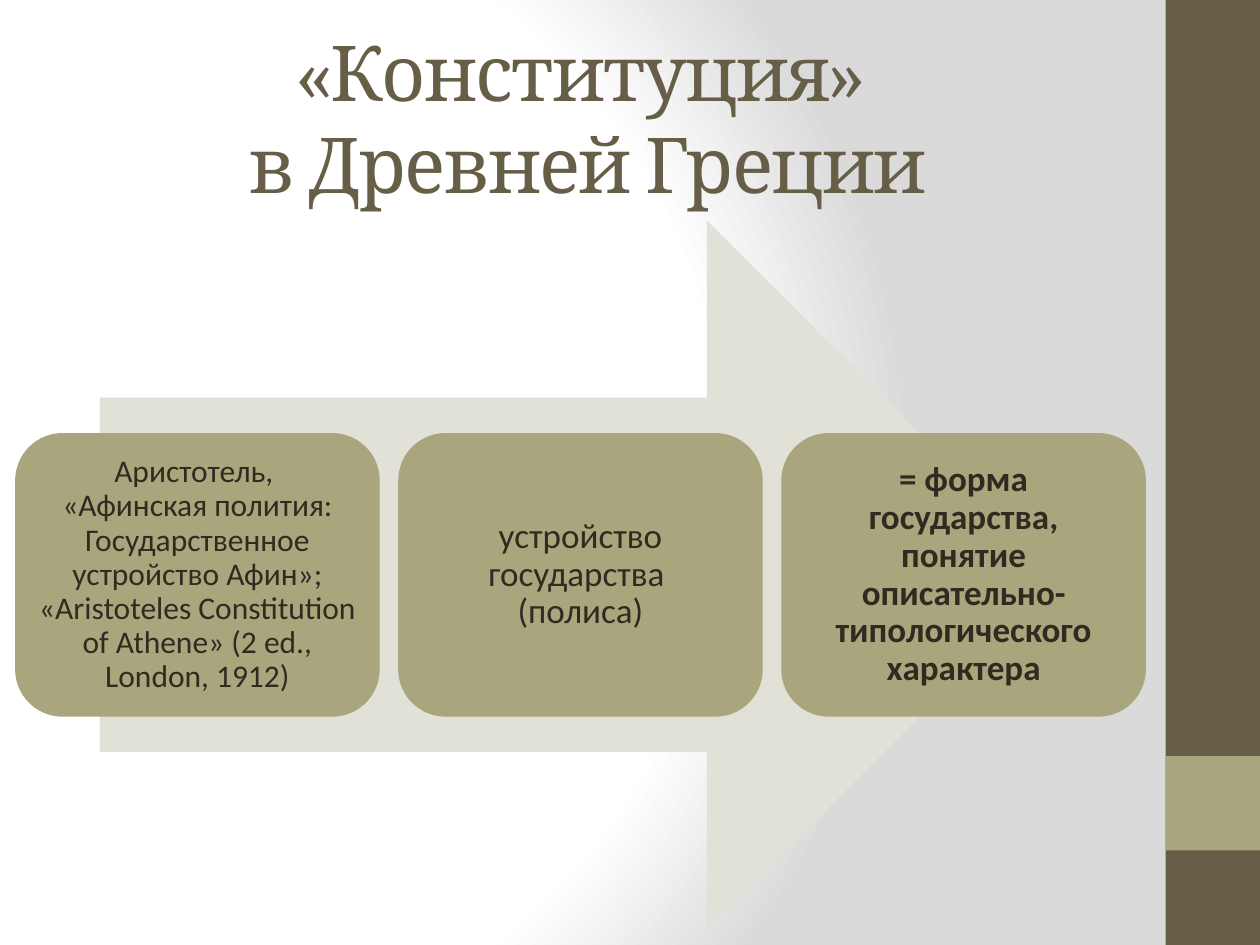
from dataclasses import dataclass

from pptx import Presentation
from pptx.dml.color import RGBColor
from pptx.enum.shapes import MSO_SHAPE
from pptx.enum.text import MSO_ANCHOR, PP_ALIGN
from pptx.oxml import parse_xml
from pptx.oxml.ns import nsdecls, qn
from pptx.shapes.autoshape import Shape
from pptx.slide import Slide
from pptx.util import Pt

BROWN, OLIVE, PALE, INK = "675E47", "A9A57C", "E2E1D7", "2F2B20"
CARD_X, CARD_Y, CARD_W, CARD_H = 8.7, 247.5, 208.3, 162
STEP = 218.9


@dataclass
class Style:
    font: str
    size: float
    color: str
    bold: bool = False
    track: float = 0
    lead: float = 1


@dataclass
class Card:
    lines: list[str]
    size: float
    inset: float
    bold: bool = False


CARDS = [
    Card(["Аристотель, ",
          "«Афинская полития: Государственное устройство Афин»;",
          "«Aristoteles Constitution of Athene» (2 еd., London, 1912)"], 18, 5.4),
    Card(["устройство государства ", "(полиса)"], 20, 6),
    Card(["= форма государства, понятие описательно-типологического характера"],
         20, 6, True),
]


def tint(code: str) -> RGBColor:
    return RGBColor.from_string(code)


def paint(slide: Slide) -> None:
    """Fill the background with a soft circular gradient."""
    stops = "".join(
        f'<a:gs pos="{pos * 1000}"><a:srgbClr val="{code}"/></a:gs>'
        for pos, code in [(0, "FFFFFF"), (75, "FFFFFF"), (100, "DADADA")])
    slide.background.fill.gradient()
    old = slide.element.find(f".//{qn('a:gradFill')}")
    new = parse_xml(
        f'<a:gradFill {nsdecls("a")} rotWithShape="1"><a:gsLst>{stops}</a:gsLst>'
        '<a:path path="circle"><a:fillToRect l="20000" t="50000" '
        'r="100000" b="50000"/></a:path></a:gradFill>')
    old.getparent().replace(old, new)


def block(slide: Slide, kind: MSO_SHAPE, x: float, y: float,
          w: float, h: float, color: str) -> Shape:
    shape = slide.shapes.add_shape(kind, Pt(x), Pt(y), Pt(w), Pt(h))
    shape.shadow.inherit = False
    shape.fill.solid()
    shape.fill.fore_color.rgb = tint(color)
    shape.line.fill.background()
    return shape


def write(shape: Shape, lines: list[str], style: Style, inset: float) -> None:
    """Set centred lines, split by line breaks, in one paragraph."""
    frame = shape.text_frame
    frame.word_wrap = True
    frame.vertical_anchor = MSO_ANCHOR.MIDDLE
    frame.margin_left = frame.margin_right = Pt(inset)
    frame.margin_top = frame.margin_bottom = Pt(inset)
    para = frame.paragraphs[0]
    para.alignment = PP_ALIGN.CENTER
    para.line_spacing = style.lead
    for i, line in enumerate(lines):
        if i:
            para.add_line_break()
        run = para.add_run()
        run.text = line
        run.font.name = style.font
        run.font.size = Pt(style.size)
        run.font.bold = style.bold
        run.font.color.rgb = tint(style.color)
        if style.track:
            run.font._element.set("spc", str(int(style.track * 100)))


def main() -> None:
    deck = Presentation()
    deck.slide_width, deck.slide_height = Pt(720), Pt(540)
    slide = deck.slides.add_slide(deck.slide_layouts[6])
    paint(slide)

    # Side band
    block(slide, MSO_SHAPE.RECTANGLE, 666, 0, 54, 540, BROWN)
    block(slide, MSO_SHAPE.RECTANGLE, 666, 432, 54, 54, OLIVE)

    # Title
    title = slide.shapes.add_textbox(Pt(36), Pt(21.6), Pt(600), Pt(90))
    write(title, ["«Конституция» ", "в Древней Греции"],
          Style("Cambria", 44, BROWN, track=-1), 3.6)

    # Arrow behind the cards
    block(slide, MSO_SHAPE.RIGHT_ARROW, 57, 126, 549.4, 405, PALE)

    # Cards
    for i, card in enumerate(CARDS):
        box = block(slide, MSO_SHAPE.ROUNDED_RECTANGLE, CARD_X + i * STEP,
                    CARD_Y, CARD_W, CARD_H, OLIVE)
        write(box, card.lines,
              Style("Calibri", card.size, INK, card.bold, lead=0.9), card.inset)

    deck.save("out.pptx")


if __name__ == "__main__":
    main()
